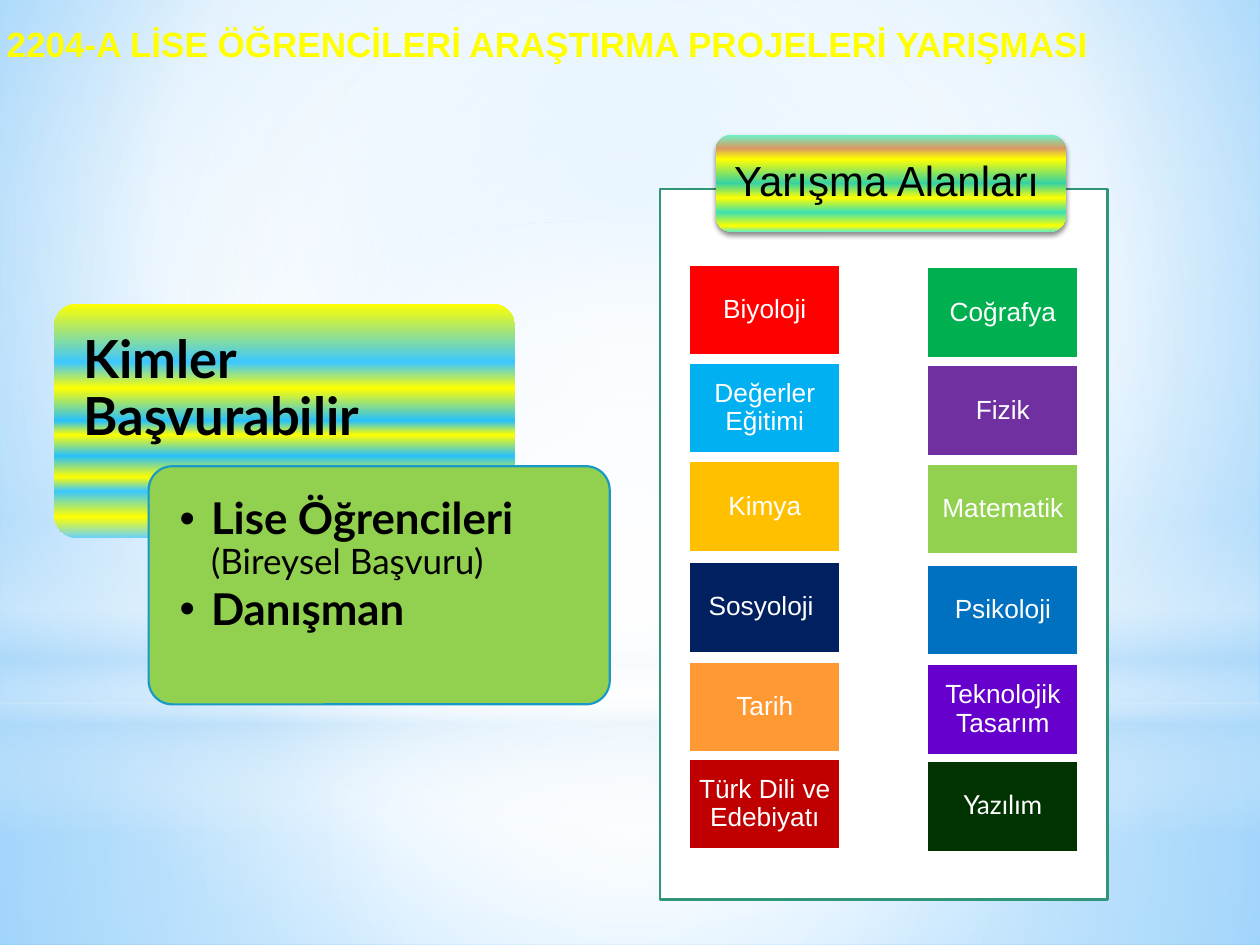
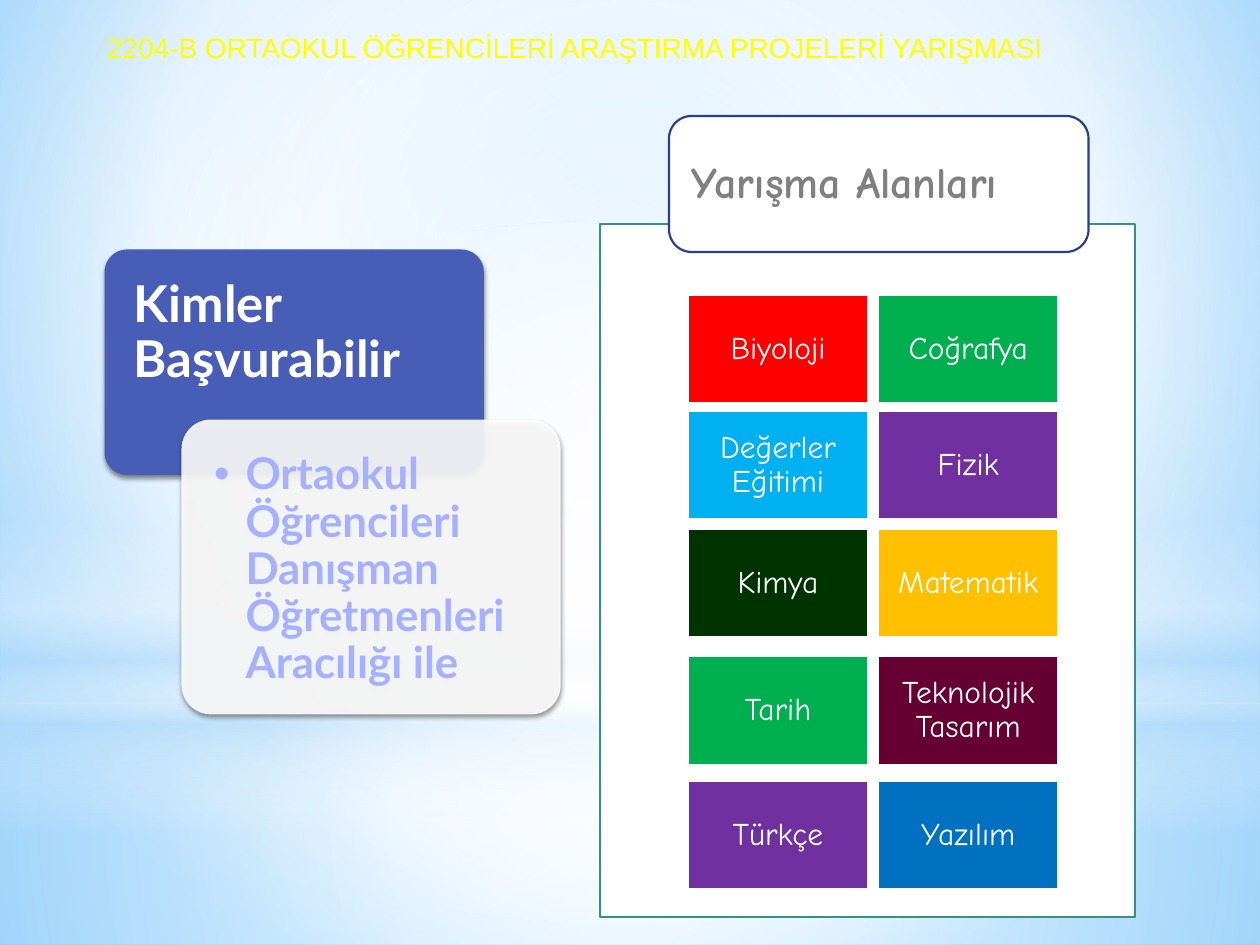
from pptx import Presentation
from pptx.dml.color import RGBColor as RGB
from pptx.enum.shapes import MSO_SHAPE as SHAPE
from pptx.enum.text import MSO_ANCHOR as ANCHOR, PP_ALIGN as ALIGN
from pptx.oxml import parse_xml
from pptx.oxml.ns import nsdecls, qn
from pptx.util import Inches, Pt

# Colours
WHITE, BLACK, GREY = RGB(255, 255, 255), RGB(0, 0, 0), RGB(0x80, 0x80, 0x80)
YELLOW, RED, DARK_RED = RGB(255, 255, 0), RGB(255, 0, 0), RGB(0xC0, 0, 0)
GREEN, LIME, FOREST = RGB(0, 0xB0, 0x50), RGB(0x92, 0xD0, 0x50), RGB(0, 0x33, 0)
SKY, BLUE, NAVY = RGB(0, 0xB0, 0xF0), RGB(0, 0x70, 0xC0), RGB(0, 0x20, 0x60)
PURPLE, VIOLET, PLUM = RGB(0x70, 0x30, 0xA0), RGB(0x66, 0, 0xCC), RGB(0x66, 0, 0x33)
AMBER, ORANGE = RGB(0xFF, 0xC0, 0), RGB(0xFF, 0x99, 0x33)
TEAL, CYAN = RGB(0x31, 0x95, 0x7A), RGB(0x19, 0x99, 0xC6)
INDIGO, DEEP_BLUE = RGB(0x47, 0x5D, 0xB6), RGB(0x2A, 0x3E, 0x8E)
LAVENDER, PALE_BLUE = RGB(0xA5, 0xB0, 0xFF), RGB(0xB4, 0xDC, 0xFA)

# Gradient stops: position, colour and, if not opaque, opacity in percent
BACKGROUND = [(0, RGB(0x9E, 0xD5, 0xFF)), (60, WHITE), (100, RGB(0x5B, 0xB9, 0xFF))]
FLOOR = [(0, WHITE, 91), (37, WHITE, 76), (100, PALE_BLUE, 79)]
WALL = [(0, WHITE, 89), (48, WHITE, 62), (100, PALE_BLUE, 79)]
HORIZON = [(0, WHITE, 0), (29, WHITE, 30), (45, PALE_BLUE, 40),
           (55, WHITE, 26), (65, PALE_BLUE, 60), (100, WHITE, 0)]
GLOW = [(0, WHITE), (56, WHITE, 0)]
AREAS_STRIPES = [(0, RGB(0x6B, 0xF3, 0xC7)), (14, RGB(0xD9, 0x99, 0x61)), (25, YELLOW),
                 (50, RGB(0x36, 0xD2, 0xA3)), (65, YELLOW),
                 (80, RGB(0x3C, 0xE1, 0xAF)), (94, YELLOW), (100, RGB(0x63, 0xED, 0xC1))]
WHO_STRIPES = [(0, YELLOW), (25, RGB(0x3C, 0xC7, 0xFF)), (36, YELLOW),
               (50, RGB(0x27, 0xBF, 0xFC)), (56, YELLOW), (65, RGB(0x27, 0xBF, 0xFC)),
               (74, YELLOW), (80, RGB(0x3A, 0xC7, 0xFF)), (91, YELLOW),
               (100, RGB(0x6B, 0xD1, 0xFF))]
CENTRE = (50, 50, 50, 50)

prs = Presentation()
prs.slide_width, prs.slide_height = Inches(10), Inches(7.5)
UNIT = prs.slide_width / 10  # the grid has 10 columns and 7.5 rows


def paint_gradient(fill, owner, stops, focus=None):
    """Vertical gradient, or a circular one when a focus rectangle is given."""
    fill.gradient()
    grad = owner.find(".//" + qn("a:gradFill"))
    for child in list(grad):
        grad.remove(child)
    marks = ""
    for position, colour, *opacity in stops:
        alpha = f'<a:alpha val="{opacity[0] * 1000}"/>' if opacity else ""
        marks += (f'<a:gs pos="{position * 1000}"><a:srgbClr val="{colour}">'
                  f'{alpha}</a:srgbClr></a:gs>')
    grad.append(parse_xml(f'<a:gsLst {nsdecls("a")}>{marks}</a:gsLst>'))
    if focus:
        l, t, r, b = (edge * 1000 for edge in focus)
        grad.append(parse_xml(f'<a:path {nsdecls("a")} path="circle">'
                              f'<a:fillToRect l="{l}" t="{t}" r="{r}" b="{b}"/></a:path>'))
    else:
        grad.append(parse_xml(f'<a:lin {nsdecls("a")} ang="5400000" scaled="0"/>'))


def add_box(slide, at, paragraphs=(), kind=SHAPE.RECTANGLE, corner=None, fill=None,
            focus=None, opacity=None, line=None, shadow=False, font="Arial", colour=WHITE,
            align=ALIGN.LEFT, anchor=ANCHOR.TOP, insets=(0, 0, 0, 0), spacing=0.9,
            bullet=False):
    """Shape with text; each paragraph is a list of (text, size, bold) runs."""
    box = slide.shapes.add_shape(kind, *(round(UNIT * v) for v in at))
    box.shadow.inherit = False
    if corner is not None:
        box.adjustments[0] = corner
    if isinstance(fill, list):
        paint_gradient(box.fill, box.element, fill, focus)
    elif fill is None:
        box.fill.background()
    else:
        box.fill.solid()
        box.fill.fore_color.rgb = fill
    if opacity is not None:
        box.element.spPr.find(".//" + qn("a:srgbClr")).append(
            parse_xml(f'<a:alpha {nsdecls("a")} val="{opacity * 1000}"/>'))
    if line is None:
        box.line.fill.background()
    else:
        box.line.color.rgb, box.line.width = line, Pt(1.25)
    if shadow:
        box.element.spPr.find(qn("a:effectLst")).append(parse_xml(
            f'<a:outerShdw {nsdecls("a")} blurRad="{Pt(3.1)}" dist="{Pt(1.8)}" dir="5400000" '
            'rotWithShape="0"><a:srgbClr val="000000"><a:alpha val="45000"/></a:srgbClr>'
            '</a:outerShdw>'))

    frame = box.text_frame
    frame.word_wrap, frame.vertical_anchor = True, anchor
    (frame.margin_left, frame.margin_top,
     frame.margin_right, frame.margin_bottom) = map(Inches, insets)
    for number, runs in enumerate(paragraphs):
        para = frame.add_paragraph() if number else frame.paragraphs[0]
        if bullet:
            props = para._p.get_or_add_pPr()
            props.set("marL", str(Inches(0.25)))
            props.set("indent", str(-Inches(0.25)))
            props.append(parse_xml(f'<a:buFont {nsdecls("a")} typeface="Arial"/>'))
            props.append(parse_xml(f'<a:buChar {nsdecls("a")} char="•"/>'))
            para.space_after = Pt(3)
        para.alignment, para.line_spacing = align, spacing
        for text, size, bold in runs:
            run = para.add_run()
            run.text = text
            run.font.name, run.font.size, run.font.bold = font, Pt(size), bold
            run.font.color.rgb = colour


# Shared backdrop
master = prs.slide_master
paint_gradient(master.background.fill, master.element, BACKGROUND, (20, 10, 20, 60))
backdrop = [
    dict(at=(0, 5.58, 10, 1.92), fill=FLOOR, focus=CENTRE),
    dict(at=(0, 0, 10, 5.58), fill=WALL, focus=CENTRE),
    dict(at=(0, 4.12, 10, 2.5), fill=HORIZON),
    dict(at=(0, 1.75, 10, 5.58), fill=GLOW, focus=CENTRE, kind=SHAPE.OVAL),
]

# What each contest slide says and how it looks
contests = [
    dict(
        title=dict(at=(-0.28, 0.13, 9.25, 0.77), paragraphs=[
            [("2204-A LİSE ÖĞRENCİLERİ ARAŞTIRMA PROJELERİ YARIŞMASI", 20, True)]]),
        panel=(5.24, 1.5, 3.55, 5.64),
        heading=dict(at=(5.68, 1.07, 2.78, 0.77), fill=AREAS_STRIPES, shadow=True,
                     colour=BLACK, insets=(0.11, 0, 0.11, 0),
                     paragraphs=[[("Yarışma Alanları", 24, False)]]),
        who=dict(at=(0.43, 2.41, 3.66, 1.86), fill=WHO_STRIPES, colour=BLACK,
                 paragraphs=[[("Kimler Başvurabilir", 30, True)]]),
        applicants=dict(at=(1.18, 3.7, 3.66, 1.89), fill=LIME, line=CYAN, colour=BLACK,
                        paragraphs=[[("Lise Öğrencileri ", 25, True),
                                     ("(Bireysel Başvuru)", 20, False)],
                                    [("Danışman", 25, True)]]),
        lefts=(5.47, 7.36), tops=(2.1, 2.88, 3.66, 4.46, 5.25, 6.02), right_drop=0.02,
        tile=(1.2, 0.72), pad=0.06, size=15, font="Arial", fonts={"Yazılım": "Lato"},
        areas=[("Biyoloji", RED), ("Coğrafya", GREEN),
               ("Değerler Eğitimi", SKY), ("Fizik", PURPLE),
               ("Kimya", AMBER), ("Matematik", LIME),
               ("Sosyoloji ", NAVY), ("Psikoloji", BLUE),
               ("Tarih", ORANGE), ("Teknolojik Tasarım", VIOLET),
               ("Türk Dili ve Edebiyatı", DARK_RED), ("Yazılım", FOREST)]),
    dict(
        title=dict(at=(0.43, 0.19, 8.27, 0.37), paragraphs=[
            [("2204-B ORTAOKUL ÖĞRENCİLERİ ARAŞTIRMA PROJELERİ YARIŞMASI", 16, False)]]),
        panel=(4.76, 1.78, 4.25, 5.5),
        heading=dict(at=(5.31, 0.92, 3.33, 1.08), fill=WHITE, line=DEEP_BLUE,
                     font="Comic Neue", colour=GREY, insets=(0.13, 0, 0.13, 0),
                     paragraphs=[[("Yarışma Alanları", 25, True)]]),
        who=dict(at=(0.83, 1.98, 3.01, 1.79), fill=INDIGO, shadow=True,
                 paragraphs=[[("Kimler Başvurabilir", 29, True)]]),
        applicants=dict(at=(1.44, 3.33, 3.01, 2.34), fill=WHITE, opacity=90, shadow=True,
                        colour=LAVENDER, paragraphs=[[(
                            "Ortaokul Öğrencileri Danışman Öğretmenleri Aracılığı ile",
                            25, True)]]),
        lefts=(5.46, 6.97), tops=(2.34, 3.26, 4.2, 5.21, 6.2), right_drop=0,
        tile=(1.43, 0.86), pad=0.07, size=18, font="Comic Neue", fonts={},
        areas=[("Biyoloji", RED), ("Coğrafya", GREEN),
               ("Değerler Eğitimi", SKY), ("Fizik", PURPLE),
               ("Kimya", FOREST), ("Matematik", AMBER),
               ("Tarih", GREEN), ("Teknolojik Tasarım", PLUM),
               ("Türkçe", PURPLE), ("Yazılım", BLUE)]),
]

for contest in contests:
    slide = prs.slides.add_slide(prs.slide_layouts[6])
    for band in backdrop:
        add_box(slide, **band)

    # Title
    add_box(slide, colour=YELLOW, align=ALIGN.CENTER, spacing=1.0,
            insets=(0.1, 0.05, 0.1, 0.05), **contest["title"])

    # Contest areas: panel, heading and two columns of tiles
    add_box(slide, contest["panel"], fill=WHITE, line=TEAL)
    add_box(slide, kind=SHAPE.ROUNDED_RECTANGLE, anchor=ANCHOR.MIDDLE, **contest["heading"])
    for index, (area, tint) in enumerate(contest["areas"]):
        row, column = divmod(index, 2)
        top = contest["tops"][row] + column * contest["right_drop"]
        add_box(slide, (contest["lefts"][column], top, *contest["tile"]),
                [[(area, contest["size"], False)]], fill=tint, line=WHITE,
                font=contest["fonts"].get(area, contest["font"]), align=ALIGN.CENTER,
                anchor=ANCHOR.MIDDLE, insets=(contest["pad"],) * 4)

    # Who may apply
    add_box(slide, kind=SHAPE.ROUNDED_RECTANGLE, corner=0.1, font="Lato",
            insets=(0.18, 0.18, 0.18, 0.12), **contest["who"])
    add_box(slide, kind=SHAPE.ROUNDED_RECTANGLE, corner=0.1, font="Lato", bullet=True,
            insets=(0.19, 0.19, 0.19, 0.19), **contest["applicants"])

prs.save("out.pptx")
